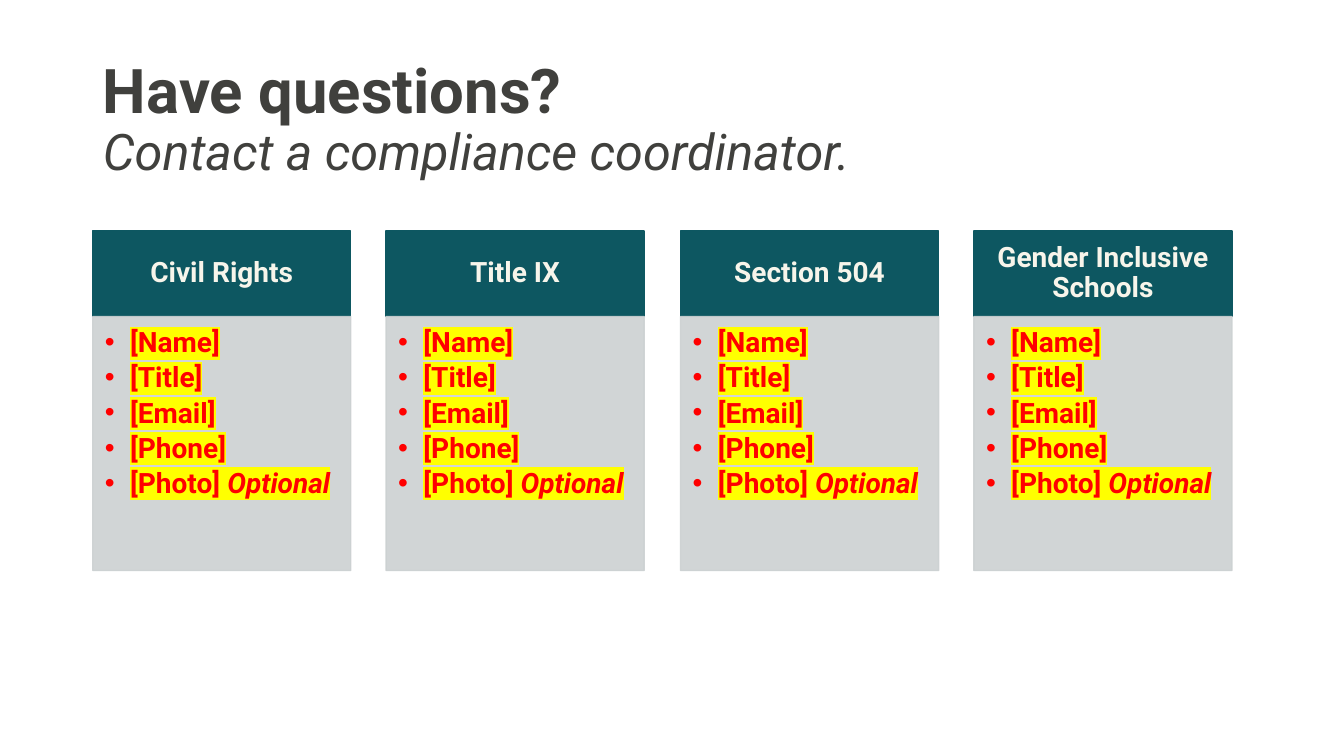
import pptx
import pptx.dml.color
import pptx.enum.shapes
import pptx.enum.text
import pptx.util
from lxml import etree
from pptx.oxml.ns import qn

EMU_PER_PX = 9144  # 100 px to the inch
TITLE_ONLY = 5
FONT = "Roboto"
INK, TEAL, GREY = "40403D", "0D5761", "CCD1D2"
CREAM, RED, YELLOW = "F7F5EB", "FF0000", "FFFF00"

LEFT, WIDTH = 92, 1130
CARD_WIDTH = 256
HEADER_TOP, HEADER_HEIGHT, BODY_HEIGHT = 229, 85, 252
COORDINATORS = ["Civil Rights", "Title IX", "Section 504", "Gender Inclusive Schools"]
DETAILS = [["[Name]"], ["[Title]"], ["[Email]"], ["[Phone]"], ["[Photo] ", "Optional"]]


def px(length):
    return pptx.util.Emu(length * EMU_PER_PX)


def color(hex_string):
    return pptx.dml.color.RGBColor.from_string(hex_string)


class SlideBuilder:
    def __init__(self, presentation):
        layout = presentation.slide_layouts[TITLE_ONLY]
        self.slide = presentation.slides.add_slide(layout)

    def style(self, paragraph, hex_string, size=None, bold=None):
        paragraph.line_spacing = 0.9
        font = paragraph.font
        font.name = FONT
        font.color.rgb = color(hex_string)
        font.bold = bold
        if size:
            font.size = pptx.util.Pt(size)

    def frame(self, shape, anchor, margins):
        """Set wrapping, anchor and margins (left, top, right, bottom)."""
        text_frame = shape.text_frame
        text_frame.word_wrap = True
        text_frame.auto_size = pptx.enum.text.MSO_AUTO_SIZE.NONE
        text_frame.vertical_anchor = anchor
        for side, margin in zip(("left", "top", "right", "bottom"), margins):
            setattr(text_frame, f"margin_{side}", px(margin))
        return text_frame

    def title(self, heading, subheading, left, top, width, height):
        shape = self.slide.shapes.title
        shape.left, shape.top = px(left), px(top)
        shape.width, shape.height = px(width), px(height)
        text_frame = self.frame(shape, pptx.enum.text.MSO_ANCHOR.MIDDLE, (10, 5, 10, 5))
        paragraph = text_frame.paragraphs[0]
        paragraph.alignment = pptx.enum.text.PP_ALIGN.LEFT
        self.style(paragraph, INK)
        first = paragraph.add_run()
        first.text = heading
        first.font.size, first.font.bold = pptx.util.Pt(44), True
        paragraph.add_line_break()
        second = paragraph.add_run()
        second.text = subheading
        second.font.size, second.font.italic = pptx.util.Pt(36), True

    def box(self, left, top, width, height, hex_string, opacity=100):
        shape = self.slide.shapes.add_shape(
            pptx.enum.shapes.MSO_SHAPE.RECTANGLE, px(left), px(top), px(width), px(height)
        )
        shape.shadow.inherit = False
        shape.line.width = pptx.util.Pt(1)
        for fill in (shape.fill, shape.line.fill):
            fill.solid()
            fill.fore_color.rgb = color(hex_string)
        if opacity < 100:
            for swatch in shape._element.spPr.iter(qn("a:srgbClr")):
                etree.SubElement(swatch, qn("a:alpha"), val=str(opacity * 1000))
        return shape

    def header(self, text, left, top, width, height):
        shape = self.box(left, top, width, height, TEAL)
        text_frame = self.frame(shape, pptx.enum.text.MSO_ANCHOR.MIDDLE, (16, 9, 16, 9))
        text_frame.text = text
        paragraph = text_frame.paragraphs[0]
        paragraph.alignment = pptx.enum.text.PP_ALIGN.CENTER
        self.style(paragraph, CREAM, 20, True)

    def bullet(self, paragraph):
        properties = paragraph._p.get_or_add_pPr()
        properties.set("marL", str(px(25)))
        properties.set("indent", str(px(-25)))
        etree.SubElement(properties, qn("a:buFont"), typeface="Arial")
        etree.SubElement(properties, qn("a:buChar"), char="•")

    def highlighted_run(self, paragraph, text, italic):
        run = paragraph.add_run()
        run.text = text
        if italic:
            run.font.italic = True
        highlight = etree.SubElement(run._r.get_or_add_rPr(), qn("a:highlight"))
        etree.SubElement(highlight, qn("a:srgbClr"), val=YELLOW)

    def detail_list(self, details, left, top, width, height):
        """Draw a grey panel of bullets; a second part of a detail is italic."""
        shape = self.box(left, top, width, height, GREY, opacity=90)
        text_frame = self.frame(shape, pptx.enum.text.MSO_ANCHOR.TOP, (12, 12, 16, 17))
        for index, parts in enumerate(details):
            paragraph = text_frame.add_paragraph() if index else text_frame.paragraphs[0]
            paragraph.alignment = pptx.enum.text.PP_ALIGN.LEFT
            paragraph.space_after = pptx.util.Pt(3.5)
            self.bullet(paragraph)
            self.style(paragraph, RED, 20, True)
            for position, part in enumerate(parts):
                self.highlighted_run(paragraph, part, italic=position > 0)


def main():
    presentation = pptx.Presentation()
    presentation.slide_width, presentation.slide_height = px(1333), px(750)
    builder = SlideBuilder(presentation)
    builder.title("Have questions?", "Contact a compliance coordinator.", LEFT, 40, WIDTH, 160)
    step = (WIDTH - CARD_WIDTH) / (len(COORDINATORS) - 1)
    for index, coordinator in enumerate(COORDINATORS):
        left = round(LEFT + index * step)
        builder.header(coordinator, left, HEADER_TOP, CARD_WIDTH, HEADER_HEIGHT)
        builder.detail_list(DETAILS, left, HEADER_TOP + HEADER_HEIGHT, CARD_WIDTH, BODY_HEIGHT)
    presentation.save("out.pptx")


if __name__ == "__main__":
    main()
